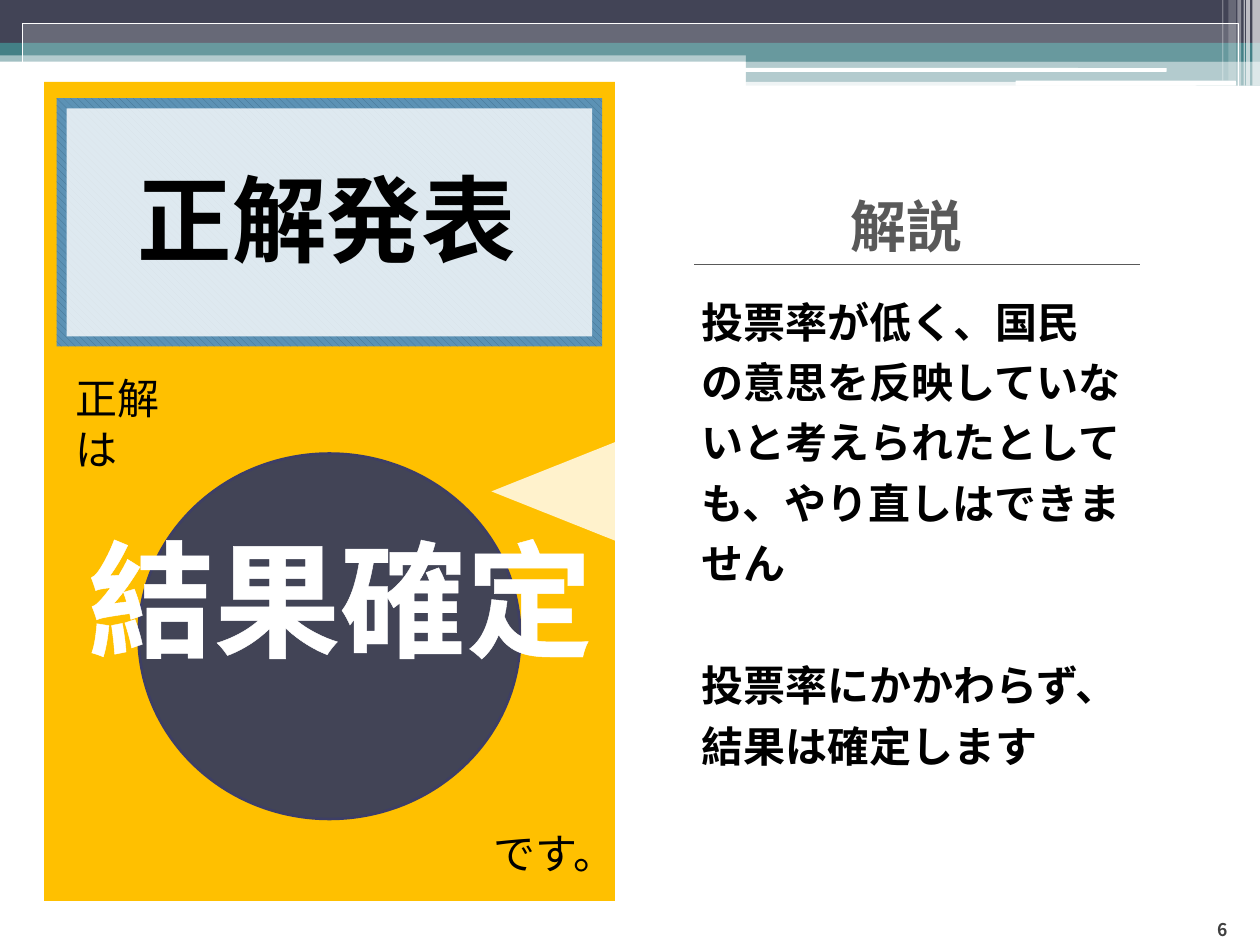
from lxml import etree
from pptx import Presentation
from pptx.dml.color import RGBColor
from pptx.enum.dml import MSO_PATTERN
from pptx.enum.shapes import MSO_CONNECTOR, MSO_SHAPE
from pptx.enum.text import MSO_ANCHOR, PP_ALIGN
from pptx.oxml.ns import qn
from pptx.util import Inches, Pt

RECT, ROUND = MSO_SHAPE.RECTANGLE, MSO_SHAPE.ROUNDED_RECTANGLE
TRIANGLE, OVAL = MSO_SHAPE.ISOSCELES_TRIANGLE, MSO_SHAPE.OVAL
LEFT, CENTER = PP_ALIGN.LEFT, PP_ALIGN.CENTER
STRAIGHT = MSO_CONNECTOR.STRAIGHT
HATCH = MSO_PATTERN.WIDE_DOWNWARD_DIAGONAL

W, H = 10, 7.5
THEME = {
    "font": "Noto Sans CJK JP",
    "navy": "424456", "teal": "438086", "white": "FFFFFF", "amber": "FFC000",
    "hatch_fg": "406F8D", "hatch_bg": "5C92B5", "rim": "3D3E66",
    "ink": "000000", "gray": "595959", "page": "404040",
    "answer": 72, "title": 54, "heading": 32, "body": 24, "number": 10,
}

BANDS = [
    (0, 0.4, W, 0.09, "teal", 50),
    (0, 0, W, 0.34, "navy", 100),
    (0, 0.34, W, 0.1, "teal", 100),
    (5.92, 0.39, 4.08, 0.1, "teal", 100),
    (5.92, 0.48, 4.08, 0.2, "teal", 50),
]
SLITS = [(5.91, 0.54, 3.35, 0.03), (8.06, 0.64, 1.75, 0.04)]
STRIPES = [
    (9.94, 0.06, 0.68, 65), (9.89, 0.03, 0.68, 65), (9.87, 0.01, 0.68, 60),
    (9.82, 0.03, 0.68, 40), (9.75, 0.06, 0.64, 20), (9.7, 0.01, 0.64, 30),
]
LABELS = [
    ((0.98, 1.23, 3.23, 1.01), "正解発表", "title", "ink", True, CENTER),
    ((0.5, 2.91, 1.16, 0.5), "正解は", "body", "ink", False, LEFT),
    ((3.82, 6.52, 0.99, 0.5), "です。", "body", "ink", False, LEFT),
    ((6.65, 1.47, 1.1, 0.64), "解説", "heading", "gray", True, LEFT),
]
EXPLANATION = [
    "投票率が低く、国民\vの意思を反映していないと考えられたとしても、やり直しはできません",
    "投票率にかかわらず、結果は確定します",
]


def rgb(name):
    return RGBColor.from_string(THEME[name])


def add_block(slide, kind, box, color, alpha=100, line=None, width=0, adj=None):
    sp = slide.shapes.add_shape(kind, *map(Inches, box))
    sp.shadow.inherit = False
    sp.fill.solid()
    sp.fill.fore_color.rgb = rgb(color)
    if alpha < 100:
        clr = sp.fill._xPr.find(".//" + qn("a:srgbClr"))
        etree.SubElement(clr, qn("a:alpha"), val=str(alpha * 1000))
    if line:
        sp.line.color.rgb = rgb(line)
        sp.line.width = Pt(width)
    else:
        sp.line.fill.background()
    if adj:
        sp.adjustments[0] = adj
    return sp


def write(sp, lines, size, color, bold, align):
    tf = sp.text_frame
    tf.word_wrap = True
    tf.text = "\n".join(lines)
    for p in tf.paragraphs:
        p.alignment = align
        for r in p.runs:
            r.font.size = Pt(THEME[size])
            r.font.bold = bold
            r.font.name = THEME["font"]
            r.font.color.rgb = rgb(color)
            etree.SubElement(r.font._element, qn("a:ea"), typeface=THEME["font"])
    return tf


def add_label(slide, box, lines, *style):
    return write(slide.shapes.add_textbox(*map(Inches, box)), lines, *style)


def outline_text(run, color, width):
    ln = etree.Element(qn("a:ln"), w=str(Pt(width)))
    fill = etree.SubElement(ln, qn("a:solidFill"))
    etree.SubElement(fill, qn("a:srgbClr"), val=THEME[color])
    run.font._element.insert(0, ln)


def add_header(slide):
    for *box, color, alpha in BANDS:
        add_block(slide, RECT, box, color, alpha)
    for box in SLITS:
        add_block(slide, ROUND, box, "white", adj=0.167)
    for x, w, h, alpha in STRIPES:
        add_block(slide, RECT, (x, 0, w, h), "white", alpha)
    add_block(slide, RECT, (0.18, 0.19, 9.65, 7.13), "white", 20, "white", 0.5)


def add_panels(slide):
    add_block(slide, RECT, (0.35, 0.65, 4.53, 6.5), "amber")
    frame = add_block(slide, RECT, (0.45, 0.78, 4.33, 1.97), "hatch_bg")
    frame.fill.patterned()
    frame.fill.pattern = HATCH
    frame.fill.fore_color.rgb = rgb("hatch_fg")
    frame.fill.back_color.rgb = rgb("hatch_bg")
    add_block(slide, RECT, (0.53, 0.86, 4.17, 1.81), "white", 80)
    add_block(slide, ROUND, (5.06, 0.65, 4.59, 6.5), "white", 80, adj=0.061)
    pointer = add_block(slide, TRIANGLE, (4.03, 3.26, 1.02, 1.28), "white", 80)
    pointer.rotation = 270


def add_content(slide):
    number = add_block(slide, RECT, (9.41, 7.15, 0.59, 0.35), "white")
    tf = write(number, ["6"], "number", "page", True, CENTER)
    tf.vertical_anchor = MSO_ANCHOR.BOTTOM
    tf.margin_left = tf.margin_right = tf.margin_top = tf.margin_bottom = Inches(0.04)

    for box, text, *style in LABELS:
        add_label(slide, box, [text], *style)

    rule = slide.shapes.add_connector(STRAIGHT, *map(Inches, (5.51, 2.1, 9.05, 2.1)))
    rule.line.color.rgb = rgb("gray")
    rule.line.width = Pt(0.75)
    etree.SubElement(rule._element.spPr, qn("a:effectLst"))

    tf = add_label(slide, (5.47, 2.22, 3.53, 3.49), EXPLANATION, "body", "ink", True, LEFT)
    for p in tf.paragraphs:
        p.line_spacing = 1.2
    tf.paragraphs[-1].space_before = Pt(35)

    add_block(slide, OVAL, (1.1, 3.6, 3.03, 2.9), "navy", line="rim", width=1.5)
    tf = add_label(slide, (0.59, 4.09, 4.22, 1.31), ["結果確定"], "answer", "white", True, CENTER)
    outline_text(tf.paragraphs[0].runs[0], "white", 1.5)


def main():
    prs = Presentation()
    prs.slide_width, prs.slide_height = Inches(W), Inches(H)
    slide = prs.slides.add_slide(prs.slide_layouts[6])
    add_header(slide)
    add_panels(slide)
    add_content(slide)
    prs.save("out.pptx")


if __name__ == "__main__":
    main()
